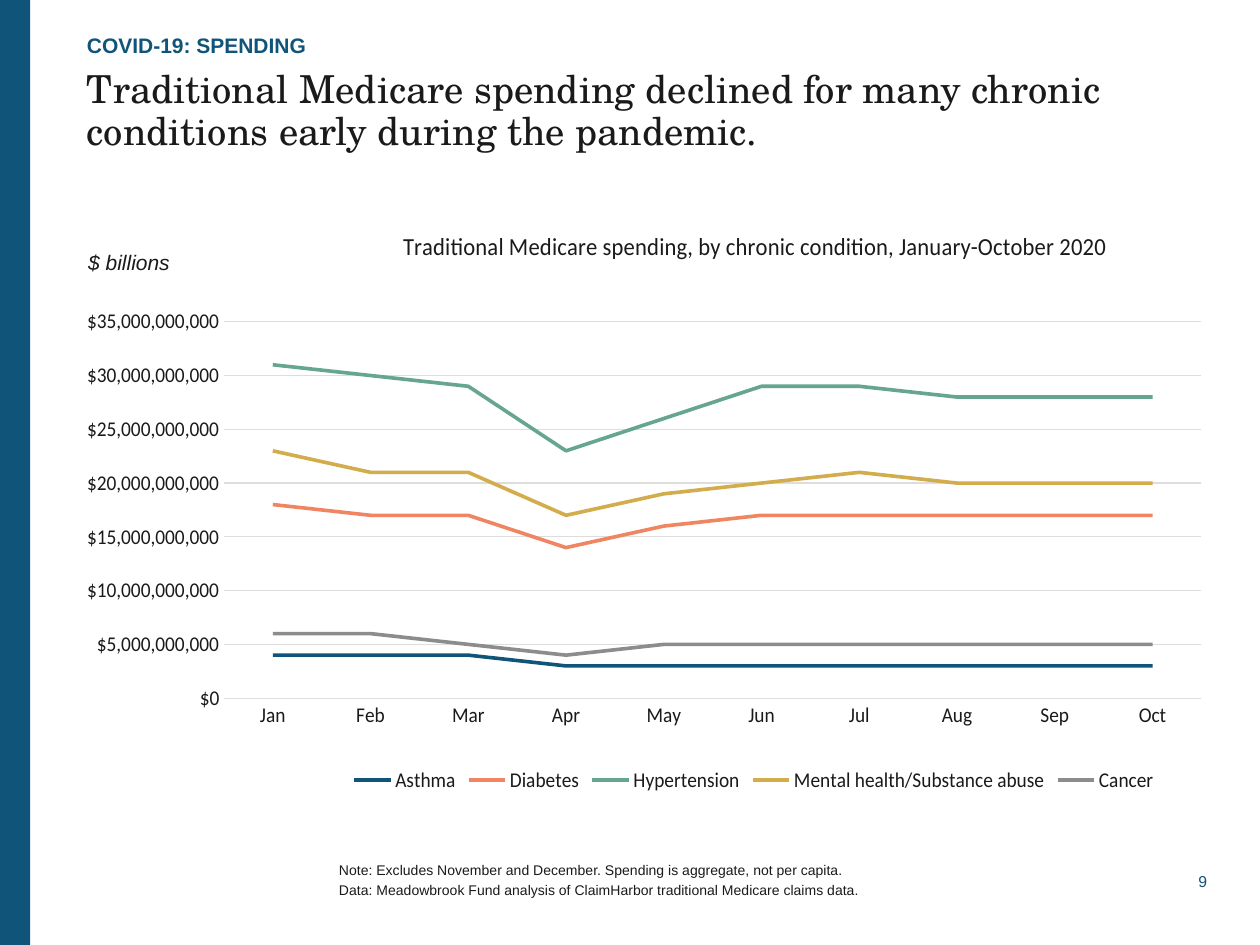
from lxml import etree
from pptx import Presentation
from pptx import util as u
from pptx.chart.data import CategoryChartData
from pptx.dml.color import RGBColor
from pptx.enum import chart as charts, shapes, text

COLORS = {"blue": "115479", "ink": "1A1A1A", "grid": "DDDDDD", "coral": "F08661",
          "green": "65A591", "gold": "D3AC4C", "gray": "8C8C8C"}
MONTHS = ["Jan", "Feb", "Mar", "Apr", "May", "Jun", "Jul", "Aug", "Sep", "Oct"]
BILLION = 10 ** 9
SPENDING = [
    ("Asthma", "blue", [4, 4, 4, 3, 3, 3, 3, 3, 3, 3]),
    ("Diabetes", "coral", [18, 17, 17, 14, 16, 17, 17, 17, 17, 17]),
    ("Hypertension", "green", [31, 30, 29, 23, 26, 29, 29, 28, 28, 28]),
    ("Mental health/Substance abuse", "gold", [23, 21, 21, 17, 19, 20, 21, 20, 20, 20]),
    ("Cancer", "gray", [6, 6, 5, 4, 5, 5, 5, 5, 5, 5]),
]


def rgb(name):
    return RGBColor.from_string(COLORS[name])


def set_font(font, size, color="ink", face="Calibri", bold=False, italic=False):
    font.size, font.name, font.bold, font.italic = u.Pt(size), face, bold, italic
    font.color.rgb = rgb(color)


def write(frame, words, align=None, spacing=None, before=0, **style):
    for index, line in enumerate(words.split("\n")):
        paragraph = frame.add_paragraph() if index else frame.paragraphs[0]
        paragraph.alignment = align
        if spacing:
            paragraph.line_spacing = spacing
        if index:
            paragraph.space_before = u.Pt(before)
        run = paragraph.add_run()
        run.text = line
        set_font(run.font, **style)


def place(part, **position):
    ns = part.nsmap["c"]
    for old in part.findall(f"{{{ns}}}layout"):
        part.remove(old)
    layout = etree.Element(f"{{{ns}}}layout")
    manual = etree.SubElement(layout, f"{{{ns}}}manualLayout")
    settings = {"xMode": "edge", "yMode": "edge", **position}
    if "w" in position:
        settings = {"layoutTarget": "inner", **settings} if part.tag.endswith("plotArea") else settings
    for key, value in settings.items():
        etree.SubElement(manual, f"{{{ns}}}{key}").set("val", str(value))
    overlay = part.find(f"{{{ns}}}overlay")
    if overlay is None:
        part.insert(0, layout)
    else:
        overlay.addprevious(layout)


class SpendingSlide:
    """Holds the style and the current slide, and adds elements to it."""

    def __init__(self, deck):
        self.slide = deck.slides.add_slide(deck.slide_layouts[6])

    def band(self, *box, color):
        band = self.slide.shapes.add_shape(shapes.MSO_SHAPE.RECTANGLE, *map(u.Inches, box))
        band.shadow.inherit = False
        band.fill.solid()
        band.fill.fore_color.rgb = rgb(color)
        band.line.fill.background()

    def label(self, words, *box, anchor=text.MSO_ANCHOR.TOP, wrap=True, face="Arial", **style):
        frame = self.slide.shapes.add_textbox(*map(u.Inches, box)).text_frame
        frame.margin_left = frame.margin_right = frame.margin_top = frame.margin_bottom = 0
        frame.word_wrap, frame.vertical_anchor = wrap, anchor
        write(frame, words, face=face, **style)

    def line_chart(self, title, *box):
        data = CategoryChartData(number_format='"$"#,##0')
        data.categories = MONTHS
        for name, _, billions in SPENDING:
            data.add_series(name, [value * BILLION for value in billions])
        chart = self.slide.shapes.add_chart(
            charts.XL_CHART_TYPE.LINE, *map(u.Inches, box), data).chart
        set_font(chart.font, 10)

        heading = chart.chart_title
        write(heading.text_frame, title, size=14)
        heading.include_in_layout = False
        place(heading._element, x=0.22, y=0.04)

        for series, (_, color, _) in zip(chart.plots[0].series, SPENDING):
            series.smooth = False
            series.marker.style = charts.XL_MARKER_STYLE.NONE
            series.format.line.width = u.Pt(2.25)
            series.format.line.color.rgb = rgb(color)
        chart.plots[0].vary_by_categories = False

        months, dollars = chart.category_axis, chart.value_axis
        for axis in (months, dollars):
            axis.major_tick_mark = axis.minor_tick_mark = charts.XL_TICK_MARK.NONE
            set_font(axis.tick_labels.font, 12)
        dollars.minimum_scale, dollars.maximum_scale = 0, 35 * BILLION
        dollars.major_unit = 5 * BILLION
        dollars.tick_labels.number_format = '"$"#,##0'
        dollars.tick_labels.number_format_is_linked = False
        dollars.format.line.fill.background()
        for line in (months.format.line, dollars.major_gridlines.format.line):
            line.width = u.Pt(0.75)
            line.color.rgb = rgb("grid")

        chart.has_legend = True
        legend = chart.legend
        legend.position = charts.XL_LEGEND_POSITION.BOTTOM
        legend.include_in_layout = False
        set_font(legend.font, 12)
        place(legend._element, x=0.17, y=0.92, w=0.79, h=0.07)
        place(chart._chartSpace.chart.plotArea, x=0.05, y=0.2, w=0.95, h=0.62)


def main():
    deck = Presentation()
    deck.slide_width, deck.slide_height = u.Inches(10), u.Inches(7.5)
    page = SpendingSlide(deck)
    page.band(0, 0, 0.24, 7.5, color="blue")
    page.label("9", 9.27, 6.88, 0.31, 0.22, anchor=text.MSO_ANCHOR.MIDDLE, wrap=False,
               align=text.PP_ALIGN.RIGHT, size=9, color="blue")
    page.label("Note: Excludes November and December. Spending is aggregate, not per capita.\n"
               "Data: Meadowbrook Fund analysis of ClaimHarbor traditional Medicare claims data.",
               2.69, 6.56, 6.59, 0.85, anchor=text.MSO_ANCHOR.MIDDLE, size=8, before=1.6)
    page.label("Traditional Medicare spending declined for many chronic conditions "
               "early during the pandemic.", 0.69, 0.56, 8.85, 0.8,
               face="TeX Gyre Schola", size=22, spacing=0.9)
    page.label("COVID-19: SPENDING", 0.69, 0.19, 8.66, 0.27,
               anchor=text.MSO_ANCHOR.BOTTOM, size=12, color="blue", bold=True)
    page.line_chart("Traditional Medicare spending, by chronic condition, January-October 2020",
                    0.69, 1.59, 8.85, 4.82)
    page.label("$ billions", 0.7, 1.98, 2, 0.25, size=12, italic=True)
    deck.save("out.pptx")


if __name__ == "__main__":
    main()
